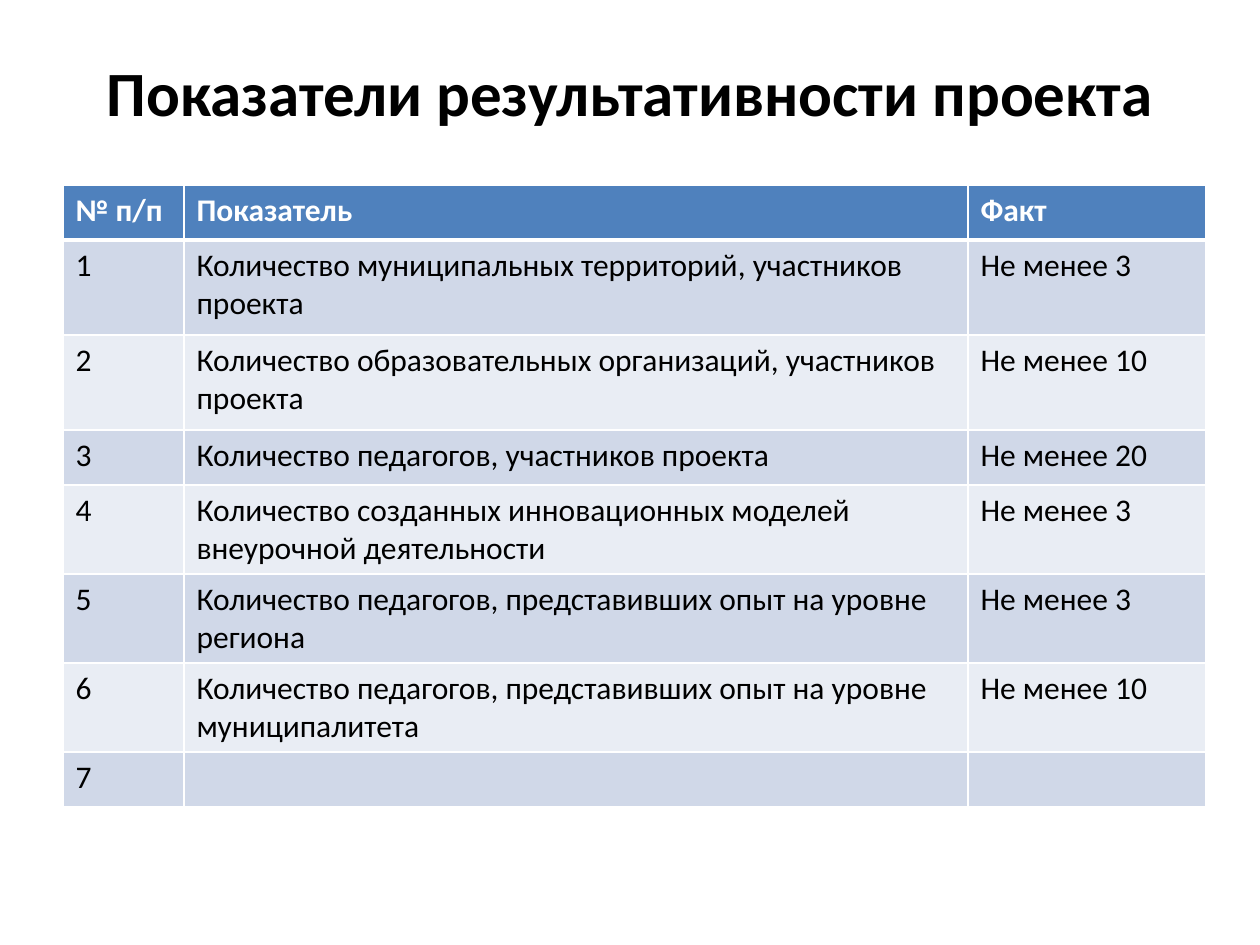
from lxml.etree import SubElement
from pptx import Presentation
from pptx.dml.color import RGBColor
from pptx.enum.text import MSO_ANCHOR as Anchor, PP_ALIGN as Align
from pptx.oxml.ns import qn
from pptx.util import Emu, Pt

SCALE = 914400 / 126
HEADER = ("№ п/п", "Показатель", "Факт")
INDICATORS = (
    ("Количество муниципальных территорий, участников проекта", "Не менее 3"),
    ("Количество образовательных организаций, участников проекта", "Не менее 10"),
    ("Количество педагогов, участников проекта", "Не менее 20"),
    ("Количество созданных инновационных моделей внеурочной деятельности", "Не менее 3"),
    ("Количество педагогов, представивших опыт на уровне региона", "Не менее 3"),
    ("Количество педагогов, представивших опыт на уровне муниципалитета", "Не менее 10"),
    ("", ""),
)
COL_WIDTHS = (121, 784, 238)
ROW_HEIGHTS = (55, 95, 95, 55, 89, 89, 89, 55)


def px(n):
    return Emu(round(n * SCALE))


def color(value):
    return RGBColor.from_string(value)


class Deck:
    """Holds the style and the current slide, and draws each kind of element."""

    font = "Calibri"
    white, black, header_fill = "FFFFFF", "000000", "4F81BD"
    bands = ("D0D8E8", "E9EDF4")

    def __init__(self, width, height):
        self.prs = Presentation()
        self.prs.slide_width, self.prs.slide_height = px(width), px(height)
        self.s = self.prs.slides.add_slide(self.prs.slide_layouts[6])

    def add_text(self, p, text, size, ink, bold):
        if not text:
            return
        r = p.add_run()
        r.text = text
        for name, value in dict(name=self.font, size=Pt(size), bold=bold).items():
            setattr(r.font, name, value)
        r.font.color.rgb = color(ink)

    def title(self, text, x, y, w, h):
        tf = self.s.shapes.add_textbox(px(x), px(y), px(w), px(h)).text_frame
        for name, value in dict(word_wrap=True, vertical_anchor=Anchor.MIDDLE).items():
            setattr(tf, name, value)
        p = tf.paragraphs[0]
        p.alignment = Align.CENTER
        self.add_text(p, text, 36, self.black, True)

    def borders(self, cell, widths):
        tc_pr = cell._tc.get_or_add_tcPr()
        for side, width in widths.items():
            ln = SubElement(tc_pr, qn(f"a:ln{side}"), w=str(Pt(width)))
            fill = SubElement(ln, qn("a:solidFill"))
            SubElement(fill, qn("a:srgbClr"), val=self.white)

    def table(self, rows, x, y, widths, heights):
        table = self.s.shapes.add_table(
            len(rows), len(widths), px(x), px(y), px(sum(widths)), px(sum(heights))
        ).table
        for column, width in zip(table.columns, widths):
            column.width = px(width)
        for i, (row, values, height) in enumerate(zip(table.rows, rows, heights)):
            row.height = px(height)
            head = i == 0
            sides = dict(L=1, R=1, T=3 if i == 1 else 1, B=3 if head else 1)
            fill = self.header_fill if head else self.bands[(i - 1) % 2]
            for cell, text in zip(row.cells, values):
                self.borders(cell, sides)
                cell.fill.solid()
                cell.fill.fore_color.rgb = color(fill)
                ink = self.white if head else self.black
                self.add_text(cell.text_frame.paragraphs[0], text, 18, ink, head)


def main():
    deck = Deck(1260, 945)
    deck.title("Показатели результативности проекта", 63, 38, 1134, 107)
    rows = [HEADER] + [(str(n), *row) for n, row in enumerate(INDICATORS, 1)]
    deck.table(rows, 63, 185, COL_WIDTHS, ROW_HEIGHTS)
    deck.prs.save("out.pptx")


if __name__ == "__main__":
    main()
